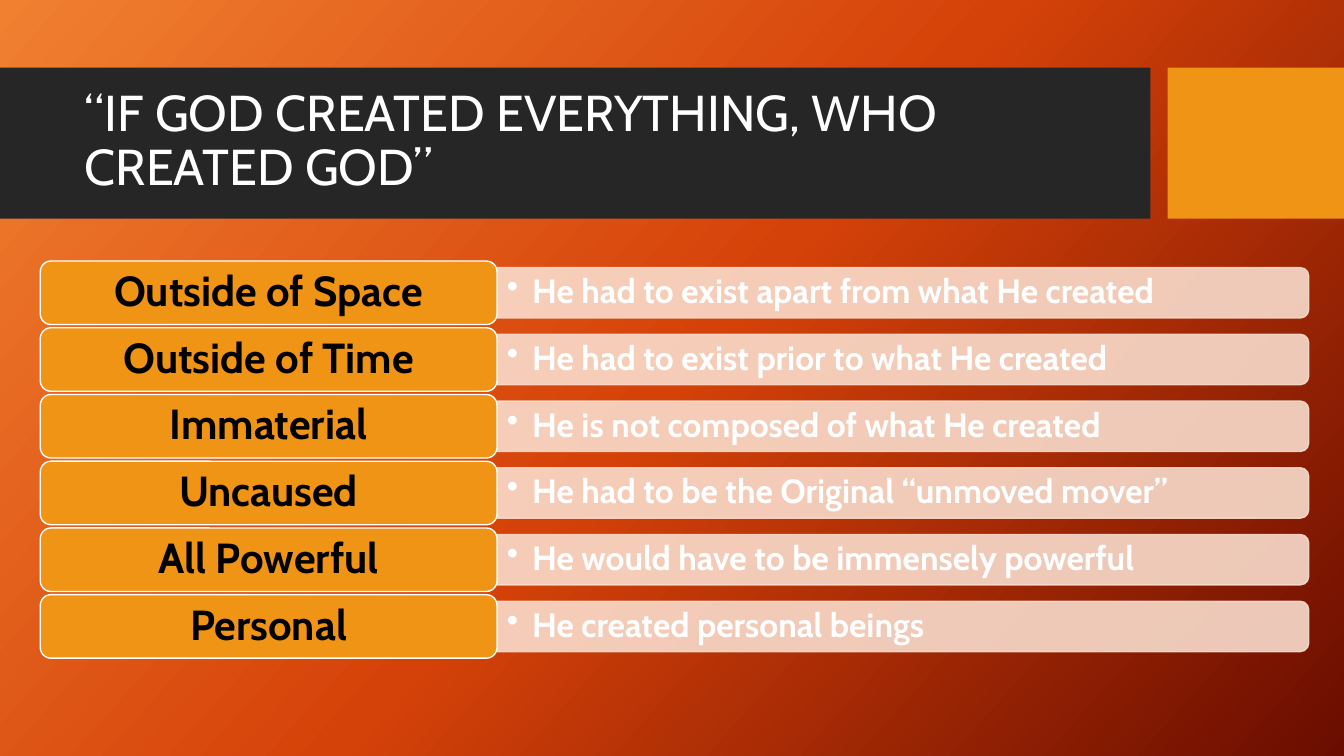
from copy import deepcopy
from dataclasses import dataclass

from lxml.etree import SubElement
from pptx import Presentation
from pptx.dml.color import RGBColor
from pptx.enum.shapes import MSO_SHAPE as SHAPE
from pptx.enum.text import MSO_ANCHOR as ANCHOR, PP_ALIGN as ALIGN
from pptx.oxml.ns import qn
from pptx.util import Inches, Pt


@dataclass(frozen=True)
class Theme:
    font: str = "Cabin"
    title_size: int = 36
    label_size: int = 30
    detail_size: int = 24
    white: str = "FFFFFF"
    black: str = "000000"
    band: str = "262626"
    accent: str = "F09415"
    bar: str = "F9DCCC"
    bar_opacity: int = 90
    background: tuple = ((0, "F18031"), (0.5, "D54209"), (1, "6A0D00"))
    background_angle: int = 42


THEME = Theme()
TITLE = "“IF GOD CREATED EVERYTHING, WHO CREATED GOD”"
ATTRIBUTES = [
    ("Outside of Space", "He had to exist apart from what He created"),
    ("Outside of Time", "He had to exist prior to what He created"),
    ("Immaterial", "He is not composed of what He created"),
    ("Uncaused", "He had to be the Original “unmoved mover”"),
    ("All Powerful", "He would have to be immensely powerful"),
    ("Personal", "He created personal beings"),
]


def set_background(slide):
    fill = slide.background.fill
    fill.gradient()
    fill.gradient_angle = 360 - THEME.background_angle
    stop_list = next(slide.element.iter(qn("a:gsLst")))
    stop_list.append(deepcopy(stop_list[0]))
    for stop, (position, color) in zip(fill.gradient_stops, THEME.background):
        stop.position = position
        stop.color.rgb = RGBColor.from_string(color)


def add_block(slide, kind, x, y, w, h, fill, line=None):
    sp = slide.shapes.add_shape(kind, Inches(x), Inches(y), Inches(w), Inches(h))
    sp.shadow.inherit = False
    sp.fill.solid()
    sp.fill.fore_color.rgb = RGBColor.from_string(fill)
    if line:
        sp.line.color.rgb = RGBColor.from_string(line)
        sp.line.width = Pt(1)
    else:
        sp.line.fill.background()
    return sp


def add_text_box(slide, x, y, w, h):
    return slide.shapes.add_textbox(Inches(x), Inches(y), Inches(w), Inches(h))


def write(sp, text, size, color, bold=False, align=ALIGN.LEFT,
          insets=(0.1, 0.05), bullet_indent=None):
    tf = sp.text_frame
    tf.word_wrap = True
    tf.vertical_anchor = ANCHOR.MIDDLE
    tf.margin_left = tf.margin_right = Inches(insets[0])
    tf.margin_top = tf.margin_bottom = Inches(insets[1])
    p = tf.paragraphs[0]
    p.alignment = align
    p.line_spacing = 0.9
    if bullet_indent:
        props = p._p.get_or_add_pPr()
        props.set("marL", str(Inches(bullet_indent)))
        props.set("indent", str(-Inches(bullet_indent)))
        SubElement(props, qn("a:buChar"), char="•")
    r = p.add_run()
    r.text = text
    r.font.name = THEME.font
    r.font.size = Pt(size)
    r.font.bold = bold
    r.font.color.rgb = RGBColor.from_string(color)


def set_opacity(sp, percent):
    """Apply one opacity to both the fill and the line."""
    for color in sp.element.spPr.iter(qn("a:srgbClr")):
        SubElement(color, qn("a:alpha"), val=str(percent * 1000))


def add_header(slide, x, y, w, h):
    tab_w, gap = 1.75, 0.17
    band_w = w - tab_w - gap
    add_block(slide, SHAPE.RECTANGLE, x, y, band_w, h, THEME.band)
    add_block(slide, SHAPE.RECTANGLE, x + w - tab_w, y, tab_w, h, THEME.accent)
    title = add_text_box(slide, x + 0.74, y + 0.15, 10.51, 1.18)
    write(title, TITLE, THEME.title_size, THEME.white)


def add_attribute_row(slide, x, y, w, h, label, detail):
    label_w, bar_h = 4.53, 0.5
    bar_x, bar_w = x + label_w, w - label_w
    middle = y + h / 2

    # The bar stands upright before its quarter turn about its centre.
    bar = add_block(slide, SHAPE.ROUND_2_SAME_RECTANGLE,
                    bar_x + (bar_w - bar_h) / 2, middle - bar_w / 2,
                    bar_h, bar_w, THEME.bar, THEME.bar)
    bar.rotation = 90
    set_opacity(bar, THEME.bar_opacity)

    text_h = 0.45
    box = add_text_box(slide, bar_x, middle - text_h / 2, bar_w, text_h)
    write(box, detail, THEME.detail_size, THEME.white, bold=True, bullet_indent=0.25)

    tile = add_block(slide, SHAPE.ROUNDED_RECTANGLE, x, y, label_w, h,
                     THEME.accent, THEME.white)
    write(tile, label, THEME.label_size, THEME.black, bold=True,
          align=ALIGN.CENTER, insets=(0.12, 0.06))


def add_attribute_list(slide, x, y, w, h):
    row_h = 0.63
    pitch = (h - row_h) / (len(ATTRIBUTES) - 1)
    for i, (label, detail) in enumerate(ATTRIBUTES):
        add_attribute_row(slide, x, y + i * pitch, w, row_h, label, detail)


def main():
    prs = Presentation()
    prs.slide_width, prs.slide_height = Inches(13.33), Inches(7.5)
    slide = prs.slides.add_slide(prs.slide_layouts[6])
    set_background(slide)
    add_header(slide, 0, 0.67, 13.33, 1.5)
    add_attribute_list(slide, 0.4, 2.59, 12.58, 3.94)
    prs.save("out.pptx")


if __name__ == "__main__":
    main()
